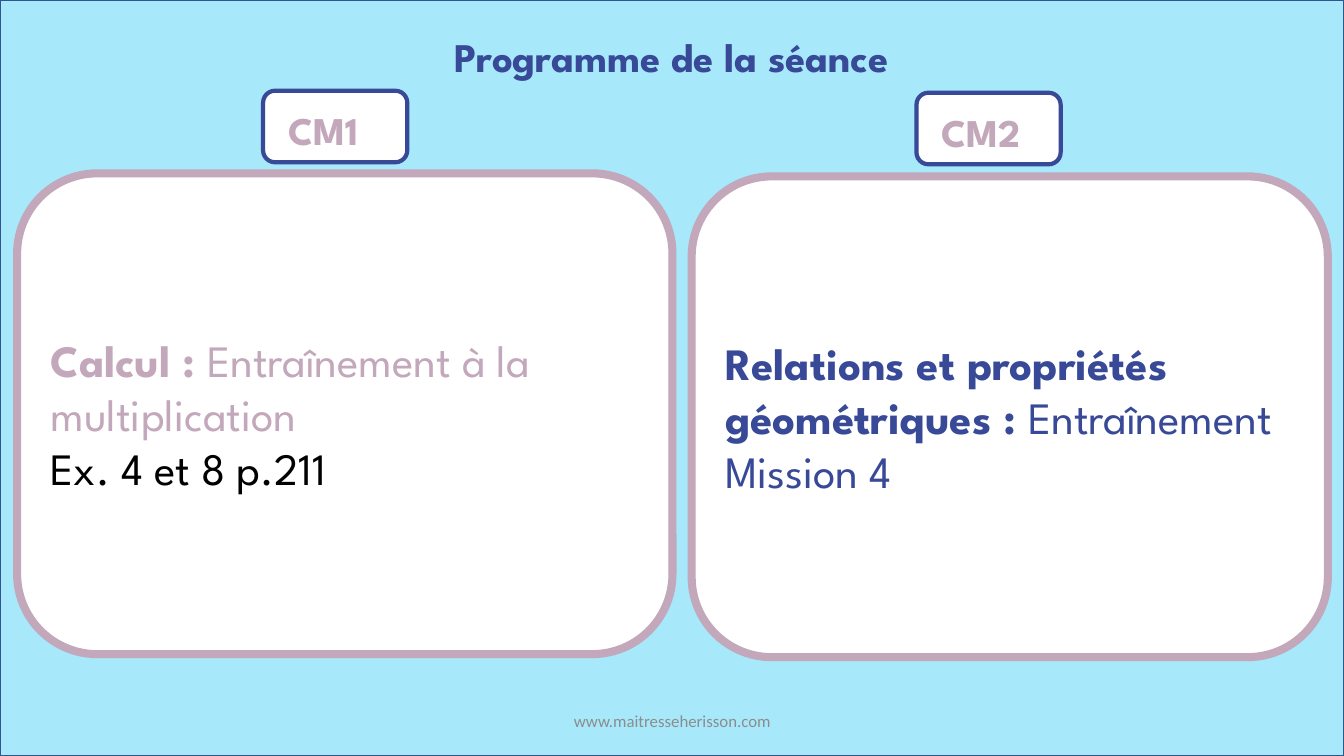
"""Build the lesson programme slide for the CM1 and CM2 groups."""
from pptx import Presentation
from pptx.dml.color import RGBColor
from pptx.enum.shapes import MSO_SHAPE as Form
from pptx.enum.text import MSO_ANCHOR as Anchor, MSO_AUTO_SIZE as Fit, PP_ALIGN as Align
from pptx.util import Inches, Pt

COLORS = {"sky": "A7E8FB", "edge": "325491", "navy": "374997", "mauve": "C3A7BA",
          "white": "FFFFFF", "black": "000000", "gray": "8C8C8C"}
FONT = "League Spartan"


def color(name):
    return RGBColor.from_string(COLORS[name])


def place(shape, box):
    shape.left, shape.top, shape.width, shape.height = map(Inches, box)


def add_run(para, text, size=32, tint="navy", bold=False, face=FONT):
    run = para.add_run()
    run.text = text
    font = run.font
    font.name, font.size, font.bold = face, Pt(size), bold
    font.color.rgb = color(tint)


def set_frame(shape, align=Align.LEFT, anchor=Anchor.TOP):
    frame = shape.text_frame
    frame.word_wrap = True
    frame.auto_size = Fit.NONE
    frame.vertical_anchor = anchor
    frame.paragraphs[0].alignment = align
    return frame


def add_panel(slide, box, fill="white", line="mauve", width=5.75, form=Form.ROUNDED_RECTANGLE):
    panel = slide.shapes.add_shape(form, *map(Inches, box))
    panel.shadow.inherit = False
    panel.fill.solid()
    panel.fill.fore_color.rgb = color(fill)
    panel.line.color.rgb = color(line)
    panel.line.width = Pt(width)
    return panel


def add_label(slide, box, text, align=Align.LEFT, anchor=Anchor.TOP, **style):
    label = slide.shapes.add_textbox(*map(Inches, box))
    add_run(set_frame(label, align, anchor).paragraphs[0], text, **style)


def add_badge(slide, left, top, text):
    add_panel(slide, (left, top, 1.43, 0.71), line="navy", width=3)
    add_label(slide, (left + 0.15, top + 0.11, 1.1, 0.57), text,
              size=28, tint="mauve", bold=True)


def add_card(slide, box, lines):
    frame = set_frame(add_panel(slide, box), anchor=Anchor.MIDDLE)
    for i, runs in enumerate(lines):
        para = frame.add_paragraph() if i else frame.paragraphs[0]
        para.alignment = Align.LEFT
        for text, tint, bold in runs:
            add_run(para, text, tint=tint, bold=bold)


def main():
    deck = Presentation()
    deck.slide_width, deck.slide_height = Inches(13.33), Inches(7.5)
    slide = deck.slides.add_slide(deck.slide_layouts[5])

    back = add_panel(slide, (0, 0, 13.33, 7.5), "sky", "edge", 1, Form.RECTANGLE)
    title = slide.shapes.title
    back.element.addnext(title.element)
    place(title, (0, 0.27, 13.33, 0.59))
    add_run(set_frame(title, Align.CENTER).paragraphs[0],
            "Programme de la séance", size=29, bold=True)

    add_badge(slide, 2.61, 0.9, "CM1")
    add_badge(slide, 9.09, 0.92, "CM2")
    add_card(slide, (0.17, 1.72, 6.5, 4.77), [
        [("Calcul : ", "mauve", True), ("Entraînement à la multiplication", "mauve", False)],
        [("Ex. 4 et 8 p.211", "black", False)]])
    add_card(slide, (6.86, 1.75, 6.31, 4.77), [
        [("Relations et propriétés géométriques : ", "navy", True),
         ("Entraînement Mission 4", "navy", False)]])
    add_label(slide, (4.42, 6.95, 4.5, 0.4), "www.maitresseherisson.com",
              Align.CENTER, Anchor.MIDDLE, size=12, tint="gray", face="Calibri")
    deck.save("out.pptx")


if __name__ == "__main__":
    main()
